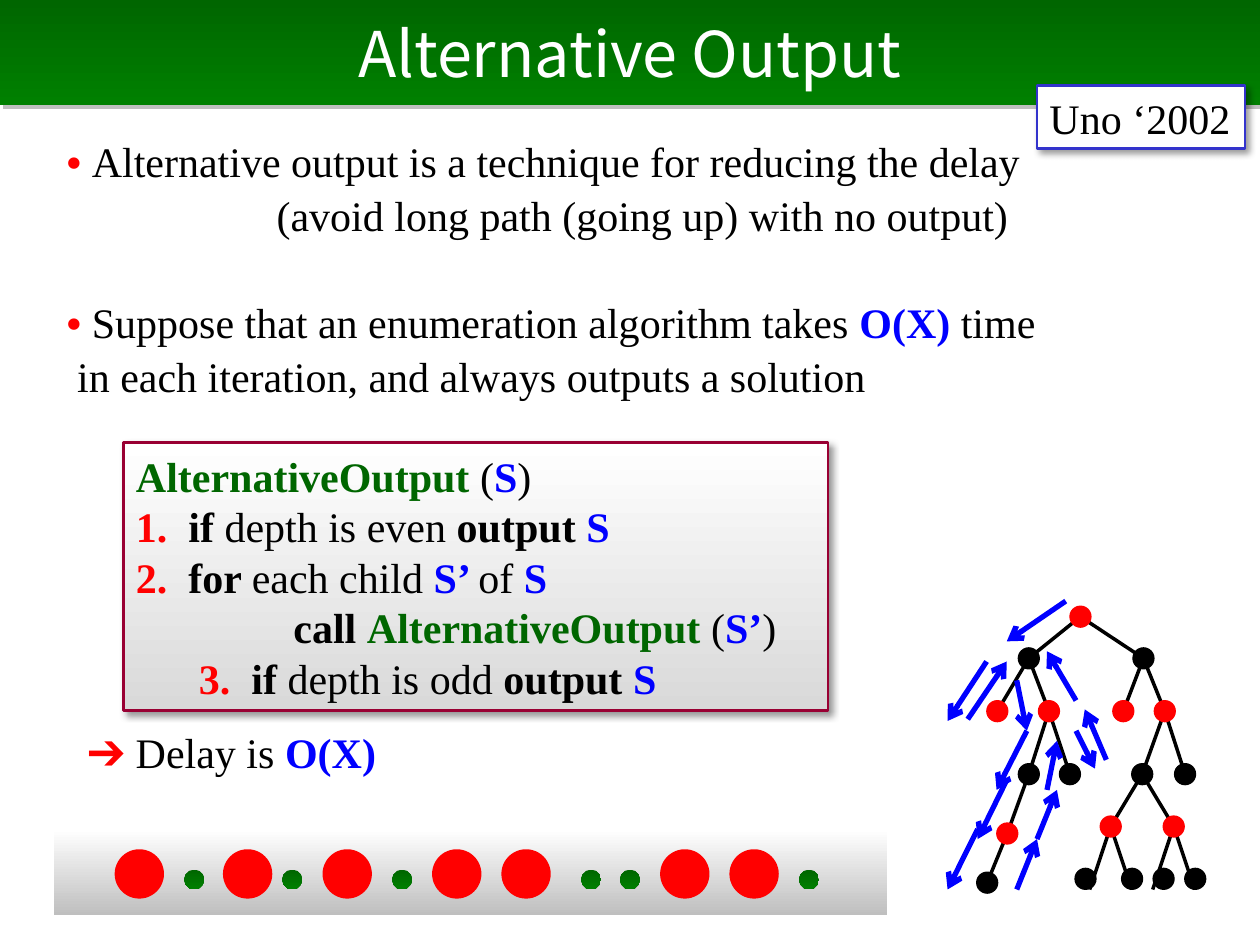
from lxml import etree
from pptx import Presentation
from pptx import util as u
from pptx.dml.color import RGBColor
from pptx.enum import shapes, text
from pptx.oxml.ns import qn

Pt = u.Pt
BLACK = RGBColor(0x00, 0x00, 0x00)
WHITE = RGBColor(0xFF, 0xFF, 0xFF)
RED = RGBColor(0xFF, 0x00, 0x00)
BLUE = RGBColor(0x00, 0x00, 0xFF)
DARK_GREEN = RGBColor(0x00, 0x66, 0x00)
GREEN = RGBColor(0x00, 0x80, 0x00)
SILVER = RGBColor(0xBF, 0xBF, 0xBF)
LIGHT_GRAY = RGBColor(0xD9, 0xD9, 0xD9)
MAROON = RGBColor(0x99, 0x00, 0x33)
INDIGO = RGBColor(0x33, 0x33, 0xCC)
SERIF = "Times New Roman"
SANS = "Noto Sans CJK JP"
RECTANGLE = shapes.MSO_SHAPE.RECTANGLE
OVAL = shapes.MSO_SHAPE.OVAL


def add_shape(slide, kind, box, fill, line=None, width=0.75):
    """Add a preset shape; a pair of colours makes a downward gradient."""
    shape = slide.shapes.add_shape(kind, *map(Pt, box))
    shape.shadow.inherit = False
    if isinstance(fill, RGBColor):
        shape.fill.solid()
        shape.fill.fore_color.rgb = fill
    else:
        shape.fill.gradient()
        shape.fill.gradient_angle = 270
        for stop, color, position in zip(shape.fill.gradient_stops, fill, (0, 1)):
            stop.color.rgb = color
            stop.position = position
    if line is None:
        shape.line.fill.background()
    else:
        shape.line.color.rgb = line
        shape.line.width = Pt(width)
    return shape


def add_shadow(shape, color, opacity, blur, distance):
    effects = shape._element.spPr.find(qn("a:effectLst"))
    shadow = etree.SubElement(effects, qn("a:outerShdw"), blurRad=str(Pt(blur)),
                              dist=str(Pt(distance)), dir="2700000",
                              algn="tl", rotWithShape="0")
    rgb = etree.SubElement(shadow, qn("a:srgbClr"), val=str(color))
    etree.SubElement(rgb, qn("a:alpha"), val=str(opacity * 1000))


def add_line(slide, start, end, color, width, arrow=False):
    line = slide.shapes.add_connector(shapes.MSO_CONNECTOR.STRAIGHT,
                                      *map(Pt, (*start, *end)))
    line.line.color.rgb = color
    line.line.width = Pt(width)
    if arrow:
        etree.SubElement(line.line._get_or_add_ln(), qn("a:tailEnd"), type="arrow")
    etree.SubElement(line._element.spPr, qn("a:effectLst"))


def add_dot(slide, x, y, size, fill, line=None):
    add_shape(slide, OVAL, (x - size / 2, y - size / 2, size, size), fill, line)


def add_runs(paragraph, runs, size=24, font=SERIF):
    """Each run is (text, colour, bold)."""
    for words, color, bold in runs:
        run = paragraph.add_run()
        run.text = words
        run.font.size = Pt(size)
        run.font.name = font
        run.font.color.rgb = color
        run.font.bold = bold


def fill_paragraphs(frame, rows):
    """Each row is (left margin, first-line indent, runs)."""
    for index, (margin, indent, runs) in enumerate(rows):
        paragraph = frame.paragraphs[0] if index == 0 else frame.add_paragraph()
        paragraph.alignment = text.PP_ALIGN.LEFT
        properties = paragraph._p.get_or_add_pPr()
        properties.set("marL", str(Pt(margin)))
        properties.set("indent", str(Pt(indent)))
        add_runs(paragraph, runs)


def draw_title(slide, box):
    banner = add_shape(slide, RECTANGLE, box, (DARK_GREEN, GREEN))
    add_shadow(banner, RGBColor(0x80, 0x80, 0x80), 50, 0, 2.8)
    paragraph = banner.text_frame.paragraphs[0]
    paragraph.alignment = text.PP_ALIGN.CENTER
    add_runs(paragraph, [("Alternative Output", WHITE, False)], 36, SANS)


def draw_body(slide, box):
    frame = slide.shapes.add_textbox(*map(Pt, box)).text_frame
    frame.word_wrap = True
    bullet = ("• ", RED, True)
    fill_paragraphs(frame, [
        (0, 0, [bullet, ("Alternative output is a technique for reducing the delay",
                         BLACK, False)]),
        (120, 0, [("(avoid long path (going up) with no output)", BLACK, False)]),
        (0, 0, [bullet, ("Suppose that an enumeration algorithm takes ", BLACK, False),
                ("O(X)", BLUE, True), (" time", BLACK, False)]),
        (6, 0, [("in each iteration, and always outputs a solution", BLACK, False)]),
        (12, 0, [("➔ ", RED, True), ("Delay is ", BLACK, False), ("O(X)", BLUE, True)]),
    ])
    pitch, lines_skipped = 30.7, (0, 0, 1, 0, 6)
    for paragraph, skipped in zip(frame.paragraphs, lines_skipped):
        paragraph.line_spacing = 0.9
        paragraph.space_before = Pt(4.9 + skipped * pitch)


def draw_algorithm(slide, box):
    panel = add_shape(slide, RECTANGLE, box, (WHITE, LIGHT_GRAY), MAROON, 1.5)
    add_shadow(panel, BLACK, 40, 4, 3)
    name = ("AlternativeOutput ", DARK_GREEN, True)
    opening, closing = ("(", BLACK, False), (")", BLACK, False)
    solution = ("S", BLUE, True)
    output = ("output ", BLACK, True)
    fill_paragraphs(panel.text_frame, [
        (0, 0, [name, opening, solution, closing]),
        (30, -30, [("1.\t", RED, True), ("if ", BLACK, True),
                   ("depth is even ", BLACK, False), output, solution]),
        (30, -30, [("2.\t", RED, True), ("for ", BLACK, True),
                   ("each child ", BLACK, False), ("S’ ", BLUE, True),
                   ("of ", BLACK, False), solution]),
        (90, 0, [("call ", BLACK, True), name, opening, ("S’", BLUE, True), closing]),
        (66, -30, [("3.\t", RED, True), ("if ", BLACK, True),
                   ("depth is odd ", BLACK, False), output, solution]),
    ])


def draw_citation(slide, box):
    label = add_shape(slide, RECTANGLE, box, WHITE, INDIGO, 1.5)
    add_shadow(label, BLACK, 40, 4, 3)
    label.text_frame.word_wrap = False
    fill_paragraphs(label.text_frame, [(0, 0, [("Uno ‘2002", BLACK, False)])])


def draw_tree(slide, left, top):
    # Nodes: level by level, red levels alternate with black ones
    red = {"root": (77.4, 10.4),
           "aa": (29.9, 64.4), "ab": (59.4, 64.4), "ba": (101.9, 64.4), "bb": (125.6, 64.4),
           "aba_a": (35.6, 134.3), "bba_a": (94.7, 130.3), "bba_b": (130.7, 130.3)}
    black = {"a": (47.9, 34.2), "b": (113.4, 34.2),
             "aba": (47.9, 100.4), "abb": (71.4, 100.4),
             "bba": (112.7, 100.4), "bbb": (137.2, 100.4),
             "leaf_1": (24.1, 162.4), "leaf_2": (80.3, 160.2), "leaf_3": (106.9, 160.2),
             "leaf_4": (124.9, 160.2), "leaf_5": (143, 160.2)}
    nodes = {**red, **black}
    children = {"root": ("a", "b"), "a": ("aa", "ab"), "b": ("ba", "bb"),
                "ab": ("aba", "abb"), "bb": ("bba", "bbb"), "aba": ("aba_a",),
                "aba_a": ("leaf_1",), "bba": ("bba_a", "bba_b")}

    def place(point):
        return left + point[0], top + point[1]

    # Edges
    for parent, names in children.items():
        for child in names:
            add_line(slide, place(nodes[parent]), place(nodes[child]), BLACK, 2)
    for parent in ("bba_a", "bba_b"):
        x, y = nodes[parent]
        for shift in (-12, 12):
            add_line(slide, place((x, y)), place((x + shift, y + 36)), BLACK, 2)
    for color, group in ((BLACK, black), (RED, red)):
        for point in group.values():
            add_dot(slide, *place(point), 12, color, color)

    # Traversal arrows
    for x1, y1, x2, y2 in (
            (69, 1.5, 35.3, 24.5), (23.8, 36, 1.5, 70), (13, 69, 35.3, 36),
            (41, 46.8, 46.8, 75.6), (46.8, 75.6, 29.5, 109.4),
            (35.3, 103.7, 18.7, 137.5), (18.7, 131.8, 1.5, 166.3),
            (41, 166.3, 52.6, 137.5), (52.6, 137.5, 64, 109.4),
            (58.3, 109.4, 64, 81.4), (74.9, 75.6, 85.7, 97.2),
            (92.2, 92.2, 79.9, 63.4), (74.9, 58.3, 58.3, 30.2)):
        add_line(slide, place((x1, y1)), place((x2, y2)), BLUE, 3, arrow=True)


def draw_timeline(slide, box):
    left, top = box[:2]
    add_shape(slide, RECTANGLE, box, (WHITE, SILVER))
    for x in (48.6, 110.5, 167.4, 230, 269.6, 360.3, 399.9):
        add_dot(slide, left + x, top + 25.6, 28.2, RED)
    for x in (80, 136, 198.8, 306.8, 329, 431.3):
        add_dot(slide, left + x, top + 28.8, 11.4, (DARK_GREEN, GREEN))


def main():
    presentation = Presentation()
    presentation.slide_width, presentation.slide_height = Pt(720), Pt(540)
    slide = presentation.slides.add_slide(presentation.slide_layouts[6])
    draw_timeline(slide, (31, 473.8, 476, 49))
    draw_title(slide, (0, 0, 720, 60))
    draw_body(slide, (31, 77, 663, 210))
    draw_tree(slide, 540, 342)
    draw_algorithm(slide, (70.6, 252.7, 402.5, 153.4))
    draw_citation(slide, (592.6, 49, 118.8, 36))
    presentation.save("out.pptx")


if __name__ == "__main__":
    main()
